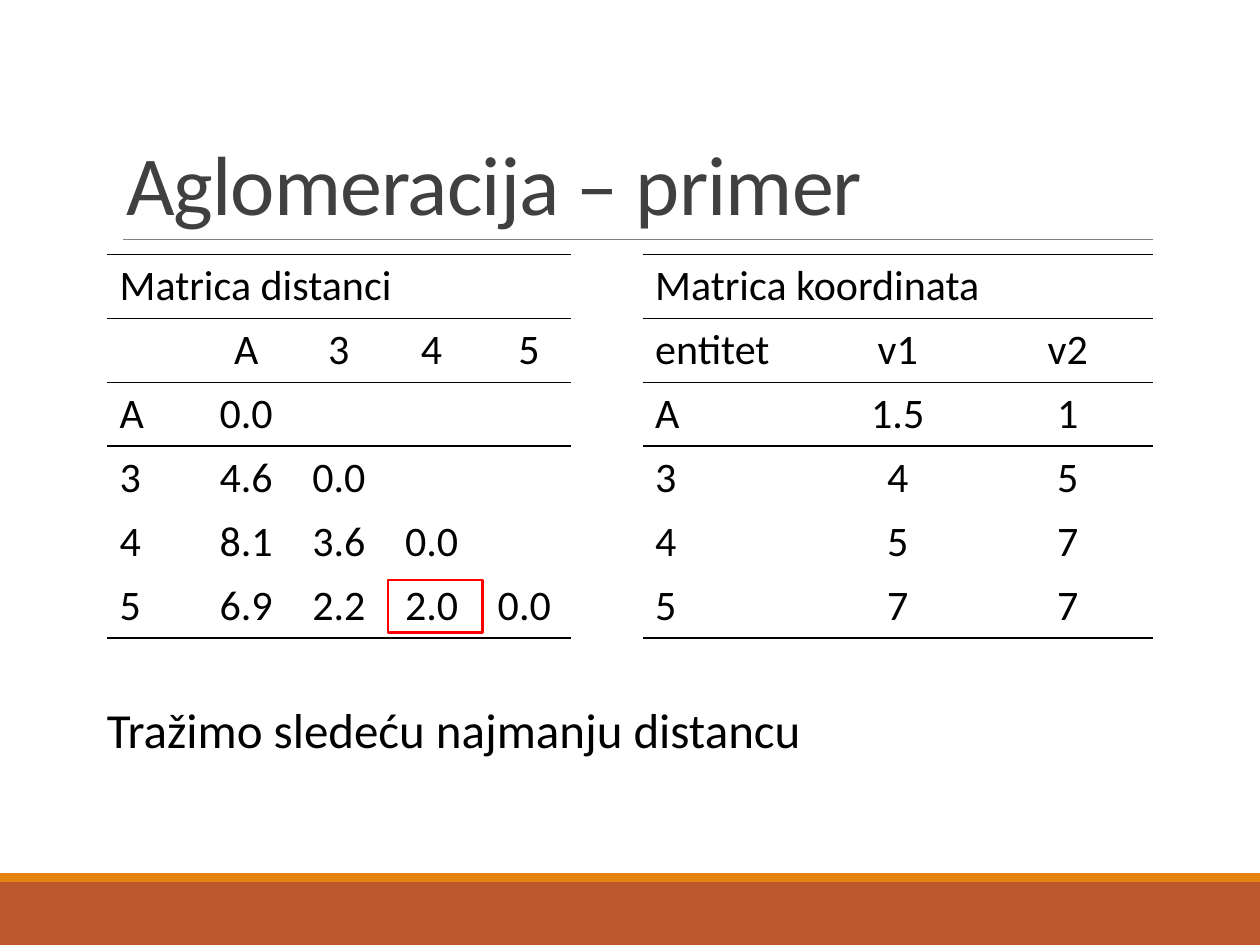
from lxml import etree
from pptx import Presentation
from pptx.dml.color import RGBColor
from pptx.enum import shapes, text
from pptx.oxml import ns
from pptx.util import Inches, Pt

FONT = "Calibri"
BLACK = RGBColor(0x00, 0x00, 0x00)
TITLE_GRAY = RGBColor(0x40, 0x40, 0x40)
RULE_GRAY = RGBColor(0x80, 0x80, 0x80)
RUST = RGBColor(0xBD, 0x58, 0x2C)
ORANGE = RGBColor(0xE4, 0x83, 0x12)
RED = RGBColor(0xFF, 0x00, 0x00)

ROW_HEIGHT = 0.5
RULED_ROWS = (0, 1, 2, 5)

DISTANCES = [
    ["Matrica distanci", "", "", "", ""],
    ["", "A", "3", "4", " 5"],
    ["A", "0.0", "", "", ""],
    ["3", "4.6", "0.0", "", ""],
    ["4", "8.1", "3.6", "0.0", ""],
    ["5", "6.9", "2.2", "2.0", "0.0"],
]
COORDINATES = [
    ["Matrica koordinata", "", ""],
    ["entitet", "v1", "v2"],
    ["A", "1.5", "1"],
    ["3", "4", "5"],
    ["4", "5", "7"],
    ["5", "7", "7"],
]


def add_span(para, words, size, color):
    span = para.add_run()
    span.text = words
    span.font.name = FONT
    span.font.size = Pt(size)
    span.font.color.rgb = color
    return span


def add_rectangle(page, left, top, width, height, fill=None, line=None):
    box = page.shapes.add_shape(
        shapes.MSO_SHAPE.RECTANGLE,
        Inches(left), Inches(top), Inches(width), Inches(height),
    )
    box.shadow.inherit = False
    if fill is None:
        box.fill.background()
    else:
        box.fill.solid()
        box.fill.fore_color.rgb = fill
    if line is None:
        box.line.fill.background()
    else:
        box.line.color.rgb = line
        box.line.width = Pt(1.25)


def add_rule(page, left, right, top):
    rule = page.shapes.add_connector(
        shapes.MSO_CONNECTOR.STRAIGHT,
        Inches(left), Inches(top), Inches(right), Inches(top),
    )
    rule.line.color.rgb = RULE_GRAY
    rule.line.width = Pt(0.5)
    etree.SubElement(rule._element.spPr, ns.qn("a:effectLst"))


def set_title(page, words):
    title = page.shapes.title
    title.left, title.top = Inches(0.9), Inches(0.31)
    title.width, title.height = Inches(8.25), Inches(1.59)
    frame = title.text_frame
    frame.auto_size = text.MSO_AUTO_SIZE.NONE
    frame.vertical_anchor = text.MSO_ANCHOR.BOTTOM
    para = frame.paragraphs[0]
    para.alignment = text.PP_ALIGN.LEFT
    para.line_spacing = 0.85
    span = add_span(para, words, 48, TITLE_GRAY)
    span.font._element.set("spc", "-50")


def set_borders(cell, ruled_sides):
    properties = cell._tc.get_or_add_tcPr()
    for side in "LRTB":
        border = etree.SubElement(properties, ns.qn(f"a:ln{side}"))
        if side in ruled_sides:
            border.set("w", str(Pt(1)))
            fill = etree.SubElement(border, ns.qn("a:solidFill"))
            etree.SubElement(fill, ns.qn("a:srgbClr"), val=str(BLACK))
        else:
            etree.SubElement(border, ns.qn("a:noFill"))


def add_matrix(page, left, width, rows):
    table = page.shapes.add_table(
        len(rows), len(rows[0]),
        Inches(left), Inches(2.02), Inches(width), Inches(ROW_HEIGHT * len(rows)),
    ).table
    table.first_row = False
    table.horz_banding = False
    for r, values in enumerate(rows):
        for c, value in enumerate(values):
            cell = table.cell(r, c)
            top = "T" if r == 0 or r - 1 in RULED_ROWS else ""
            bottom = "B" if r in RULED_ROWS else ""
            set_borders(cell, top + bottom)
            cell.fill.background()
            cell.vertical_anchor = text.MSO_ANCHOR.MIDDLE
            if value:
                para = cell.text_frame.paragraphs[0]
                para.alignment = text.PP_ALIGN.CENTER if c else text.PP_ALIGN.LEFT
                add_span(para, value, 24, BLACK)
    table.cell(0, 0).merge(table.cell(0, len(rows[0]) - 1))


def add_note(page, words):
    box = page.shapes.add_textbox(Inches(0.75), Inches(5.5), Inches(5.77), Inches(0.57))
    box.text_frame.word_wrap = False
    add_span(box.text_frame.paragraphs[0], words, 28, BLACK)


def main():
    deck = Presentation()
    deck.slide_width, deck.slide_height = Inches(10), Inches(7.5)
    page = deck.slides.add_slide(deck.slide_layouts[5])
    add_rectangle(page, 0, 7, 10, 0.5, fill=RUST)
    add_rectangle(page, 0, 6.93, 10, 0.07, fill=ORANGE)
    add_rule(page, 0.98, 9.15, 1.9)
    set_title(page, "Aglomeracija – primer")
    add_matrix(page, 0.85, 3.68, DISTANCES)
    add_matrix(page, 5.1, 4.05, COORDINATES)
    add_note(page, "Tražimo sledeću najmanju distancu")
    add_rectangle(page, 3.08, 4.6, 0.75, 0.42, line=RED)
    deck.save("out.pptx")


if __name__ == "__main__":
    main()
